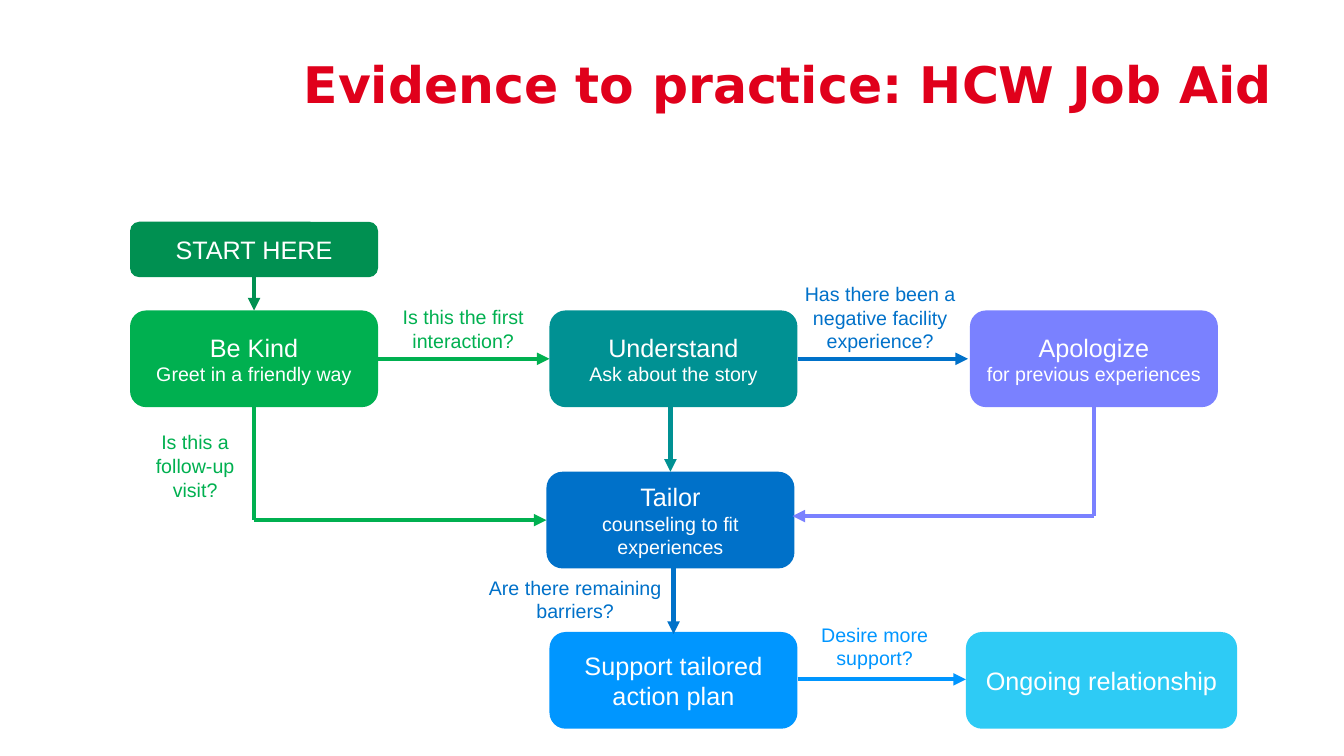
from dataclasses import dataclass

from lxml import etree
from pptx import Presentation
from pptx.dml.color import RGBColor
from pptx.enum.shapes import MSO_CONNECTOR, MSO_SHAPE
from pptx.enum.text import MSO_ANCHOR, PP_ALIGN
from pptx.oxml.ns import qn
from pptx.util import Inches, Pt

ROUNDED = MSO_SHAPE.ROUNDED_RECTANGLE
STRAIGHT = MSO_CONNECTOR.STRAIGHT
CENTER = PP_ALIGN.CENTER
TOP, MIDDLE = MSO_ANCHOR.TOP, MSO_ANCHOR.MIDDLE


@dataclass(frozen=True)
class Theme:
    title_font: str = "DejaVu Sans"
    body_font: str = "Arial"
    title_size: int = 36
    step_size: int = 18
    note_size: int = 14
    line_width: int = 3
    white: str = "FFFFFF"
    red: str = "E0001B"
    dark_green: str = "009051"
    green: str = "00B050"
    teal: str = "009193"
    violet: str = "7A81FF"
    blue: str = "0071C9"
    bright_blue: str = "0096FF"
    cyan: str = "2ECBF5"


THEME = Theme()
STEP_WIDTH, STEP_HEIGHT = 2.46, 0.96
LEFT, MIDDLE_LEFT, RIGHT = 1.29, 5.45, 9.62
UPPER, TAILOR_TOP, LOWER = 3.08, 4.68, 6.27
TAILOR_LEFT = 5.42

# Heading, detail, left, top, width, height, colour
STEPS = [
    ("START HERE", "", LEFT, 2.2, STEP_WIDTH, 0.55, THEME.dark_green),
    ("Be Kind", "Greet in a friendly way", LEFT, UPPER, STEP_WIDTH, STEP_HEIGHT, THEME.green),
    ("Understand", "Ask about the story", MIDDLE_LEFT, UPPER, STEP_WIDTH, STEP_HEIGHT, THEME.teal),
    ("Apologize", "for previous experiences", RIGHT, UPPER, STEP_WIDTH, STEP_HEIGHT, THEME.violet),
    ("Tailor", "counseling to fit experiences", TAILOR_LEFT, TAILOR_TOP, STEP_WIDTH, STEP_HEIGHT,
     THEME.blue),
    ("Support tailored action plan", "", MIDDLE_LEFT, LOWER, STEP_WIDTH, STEP_HEIGHT,
     THEME.bright_blue),
    ("Ongoing relationship", "", 9.58, LOWER, 2.69, STEP_HEIGHT, THEME.cyan),
]

# Text, left, top, width, height, colour
QUESTIONS = [
    ("Is this the first interaction?", 3.75, 2.98, 1.69, 0.57, THEME.green),
    ("Has there been a negative facility experience?", 7.85, 2.75, 1.76, 0.81, THEME.blue),
    ("Is this a follow-up visit?", 1.29, 4.22, 1.29, 0.81, THEME.green),
    ("Are there remaining barriers?", 4.73, 5.66, 1.95, 0.57, THEME.blue),
    ("Desire more support?", 7.77, 6.13, 1.81, 0.57, THEME.bright_blue),
]

# Colour, then the points of the route; the arrowhead is at the last point
ROUTES = [
    (THEME.dark_green, (2.52, 2.75), (2.52, 3.08)),
    (THEME.green, (3.75, 3.56), (5.45, 3.56)),
    (THEME.blue, (7.91, 3.56), (9.6, 3.56)),
    (THEME.teal, (6.65, 4.03), (6.65, 4.68)),
    (THEME.violet, (10.85, 4.03), (10.85, 5.12), (7.86, 5.12)),
    (THEME.green, (2.52, 4.02), (2.52, 5.16), (5.42, 5.16)),
    (THEME.blue, (6.68, 5.64), (6.68, 6.29)),
    (THEME.bright_blue, (7.91, 6.74), (9.58, 6.74)),
]


def write_para(para, text, *, size, color, font=THEME.body_font, bold=False, spacing=1.0):
    para.alignment = CENTER
    para.line_spacing = spacing
    span = para.add_run()
    span.text = text
    span.font.name = font
    span.font.size = Pt(size)
    span.font.bold = bold
    span.font.color.rgb = RGBColor.from_string(color)


class FlowPage:
    """Holds the theme and the current slide."""

    def __init__(self, deck, theme):
        self.theme = theme
        self.page = deck.slides.add_slide(deck.slide_layouts[6])

    def text_frame(self, left, top, width, height, anchor):
        box = self.page.shapes.add_textbox(*map(Inches, (left, top, width, height)))
        frame = box.text_frame
        frame.word_wrap = True
        frame.vertical_anchor = anchor
        return frame

    def title(self, text, left, top, width, height):
        frame = self.text_frame(left, top, width, height, MIDDLE)
        frame.margin_left = frame.margin_right = frame.margin_top = frame.margin_bottom = 0
        write_para(frame.paragraphs[0], text, size=self.theme.title_size, color=self.theme.red,
                   font=self.theme.title_font, bold=True, spacing=0.9)

    def question(self, text, left, top, width, height, color):
        frame = self.text_frame(left, top, width, height, TOP)
        write_para(frame.paragraphs[0], text, size=self.theme.note_size, color=color)

    def step(self, heading, detail, left, top, width, height, color):
        box = self.page.shapes.add_shape(ROUNDED, *map(Inches, (left, top, width, height)))
        box.shadow.inherit = False
        box.fill.solid()
        box.fill.fore_color.rgb = RGBColor.from_string(color)
        box.line.fill.background()
        frame = box.text_frame
        frame.word_wrap = True
        frame.vertical_anchor = MIDDLE
        write_para(frame.paragraphs[0], heading, size=self.theme.step_size,
                   color=self.theme.white)
        if detail:
            write_para(frame.add_paragraph(), detail, size=self.theme.note_size,
                       color=self.theme.white)

    def line(self, start, end, color, arrow):
        connector = self.page.shapes.add_connector(STRAIGHT, *map(Inches, (*start, *end)))
        connector.line.color.rgb = RGBColor.from_string(color)
        connector.line.width = Pt(self.theme.line_width)
        if arrow:
            etree.SubElement(connector.line._get_or_add_ln(), qn("a:tailEnd"), type="triangle")
        etree.SubElement(connector._element.spPr, qn("a:effectLst"))

    def route(self, color, *points):
        """Joins the points with lines and puts an arrowhead on the last one."""
        for start, end in zip(points, points[1:]):
            self.line(start, end, color, arrow=end == points[-1])


def main():
    deck = Presentation()
    deck.slide_width, deck.slide_height = Inches(13.33), Inches(7.5)
    flow = FlowPage(deck, THEME)
    flow.title("Evidence to practice: HCW Job Aid", 2.52, 0.2, 10.59, 1.34)
    for step in STEPS:
        flow.step(*step)
    for route in ROUTES:
        flow.route(*route)
    for question in QUESTIONS:
        flow.question(*question)
    deck.save("out.pptx")


if __name__ == "__main__":
    main()
